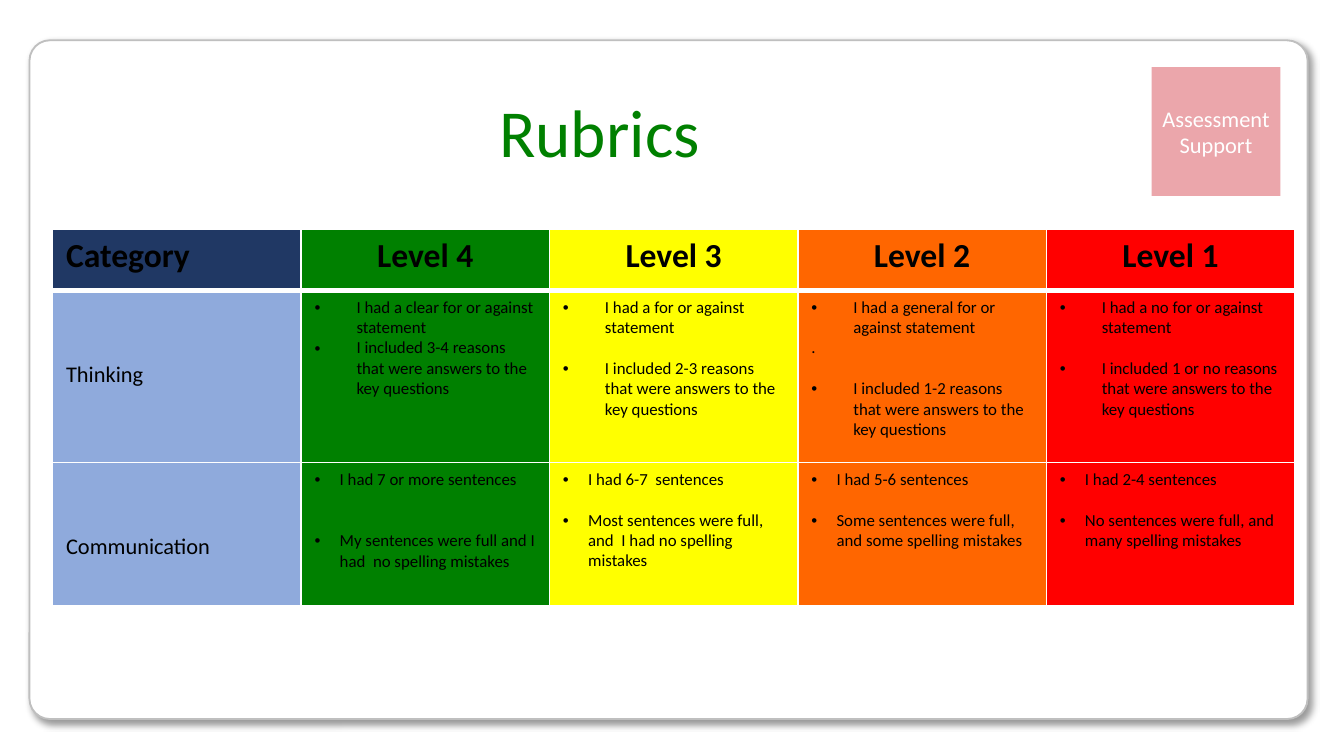
from lxml.etree import SubElement
from pptx import Presentation
from pptx.dml.color import RGBColor
from pptx.enum.shapes import MSO_SHAPE
from pptx.enum.text import MSO_ANCHOR, PP_ALIGN
from pptx.oxml.ns import qn
from pptx.util import Pt

FONT = "Calibri"
COLORS = {
    "white": "FFFFFF", "black": "000000", "card_line": "BFBFBF",
    "badge": "EBA6AB", "title": "008000", "header": "203864",
    "category": "8FAADC", "level4": "008000", "level3": "FFFF00",
    "level2": "FF6600", "level1": "FF0000",
}
LEVELS = ["level4", "level3", "level2", "level1"]
LINE = 11  # height of one 9 pt line

# Each criterion: (text, blank lines before it, has a bullet)
RUBRIC = [
    ("Thinking", 92.2, 22.5, [
        [("I had a clear for or against statement", 0, True),
         ("I included 3-4 reasons that were answers to the key questions", 0, True)],
        [("I had a for or against statement", 0, True),
         ("I included 2-3 reasons that were answers to the key questions", 1, True)],
        [("I had a general for or against statement", 0, True),
         (".", 0, False),
         ("I included 1-2 reasons that were answers to the key questions", 1, True)],
        [("I had a no for or against statement", 0, True),
         ("I included 1 or no reasons that were answers to the key questions", 1, True)],
    ]),
    ("Communication", 77, 13.5, [
        [("I had 7 or more sentences", 0, True),
         ("My sentences were full and I had  no spelling mistakes", 2, True)],
        [("I had 6-7  sentences", 0, True),
         ("Most sentences were full, and  I had no spelling mistakes", 1, True)],
        [("I had 5-6 sentences", 0, True),
         ("Some sentences were full, and some spelling mistakes", 1, True)],
        [("I had 2-4 sentences", 0, True),
         ("No sentences were full, and many spelling mistakes", 1, True)],
    ]),
]


def rgb(name):
    return RGBColor.from_string(COLORS[name])


def write(paragraph, text, size, color="black", bold=False, align=PP_ALIGN.LEFT):
    paragraph.text = text
    paragraph.alignment = align
    for run in paragraph.runs:
        run.font.name = FONT
        run.font.size = Pt(size)
        run.font.bold = bold
        run.font.color.rgb = rgb(color)


def add_bullet(paragraph, indent):
    properties = paragraph._p.get_or_add_pPr()
    properties.set("marL", str(Pt(indent)))
    properties.set("indent", str(-Pt(indent)))
    SubElement(properties, qn("a:buFont"), typeface="Arial")
    SubElement(properties, qn("a:buChar"), char="•")


def style_cell(cell, color, top=1, bottom=1):
    properties = cell._tc.get_or_add_tcPr()
    for side, width in (("L", 1), ("R", 1), ("T", top), ("B", bottom)):
        border = SubElement(properties, qn(f"a:ln{side}"), w=str(Pt(width)))
        fill = SubElement(border, qn("a:solidFill"))
        SubElement(fill, qn("a:srgbClr"), val=COLORS["white"])
    cell.fill.solid()
    cell.fill.fore_color.rgb = rgb(color)
    cell.margin_left = cell.margin_right = Pt(7.2)
    cell.margin_top = cell.margin_bottom = Pt(3.6)


def add_card(slide, left, top, width, height):
    card = slide.shapes.add_shape(MSO_SHAPE.ROUNDED_RECTANGLE,
                                  Pt(left), Pt(top), Pt(width), Pt(height))
    card.adjustments[0] = 0.03
    card.fill.solid()
    card.fill.fore_color.rgb = rgb("white")
    card.line.color.rgb = rgb("card_line")
    card.line.width = Pt(1)
    # Soft shadow towards the lower right
    card.shadow.inherit = False
    effects = card._element.spPr.find(qn("a:effectLst"))
    shadow = SubElement(effects, qn("a:outerShdw"), blurRad=str(Pt(4)),
                        dist=str(Pt(3)), dir="2700000", algn="tl", rotWithShape="0")
    shade = SubElement(shadow, qn("a:srgbClr"), val=COLORS["black"])
    SubElement(shade, qn("a:alpha"), val="40000")


def add_badge(slide, left, top, side):
    badge = slide.shapes.add_shape(MSO_SHAPE.RECTANGLE,
                                   Pt(left), Pt(top), Pt(side), Pt(side))
    badge.shadow.inherit = False
    badge.fill.solid()
    badge.fill.fore_color.rgb = rgb("badge")
    badge.line.fill.background()
    frame = badge.text_frame
    frame.word_wrap = True
    frame.vertical_anchor = MSO_ANCHOR.MIDDLE
    frame.margin_left = frame.margin_right = Pt(5)
    frame.margin_top = frame.margin_bottom = Pt(3)
    write(frame.paragraphs[0], "Assessment Support", 12, "white", align=PP_ALIGN.CENTER)


def add_title(slide, left, top, width, height):
    title = slide.shapes.add_textbox(Pt(left), Pt(top), Pt(width), Pt(height))
    title.text_frame.word_wrap = True
    write(title.text_frame.paragraphs[0], "Rubrics", 36, "title", align=PP_ALIGN.CENTER)


def add_rubric(slide, left, top, width, header_height):
    heights = [header_height] + [height for _, height, _, _ in RUBRIC]
    columns = len(LEVELS) + 1
    rubric = slide.shapes.add_table(len(heights), columns, Pt(left), Pt(top),
                                    Pt(width), Pt(sum(heights))).table
    rubric.horz_banding = False
    for row, height in zip(rubric.rows, heights):
        row.height = Pt(height)
    for column in rubric.columns:
        column.width = Pt(width / columns)

    # Header row
    headings = ["Category"] + [f"Level {level[-1]}" for level in LEVELS]
    for index, (heading, color) in enumerate(zip(headings, ["header"] + LEVELS)):
        cell = rubric.cell(0, index)
        style_cell(cell, color, bottom=3)
        align = PP_ALIGN.CENTER if index else PP_ALIGN.LEFT
        write(cell.text_frame.paragraphs[0], heading, 18, bold=True, align=align)

    # Category rows
    for row, (category, _, indent, criteria) in enumerate(RUBRIC, start=1):
        top_border = 3 if row == 1 else 1
        label = rubric.cell(row, 0)
        style_cell(label, "category", top_border)
        label.margin_top = Pt(37.8)
        write(label.text_frame.paragraphs[0], category, 12)
        for column, (color, items) in enumerate(zip(LEVELS, criteria), start=1):
            cell = rubric.cell(row, column)
            style_cell(cell, color, top_border)
            frame = cell.text_frame
            for position, (text, blank_lines, bulleted) in enumerate(items):
                paragraph = frame.add_paragraph() if position else frame.paragraphs[0]
                if bulleted:
                    add_bullet(paragraph, indent)
                if blank_lines:
                    paragraph.space_before = Pt(blank_lines * LINE)
                write(paragraph, text, 9)


def main():
    deck = Presentation()
    deck.slide_width, deck.slide_height = Pt(720), Pt(405)
    slide = deck.slides.add_slide(deck.slide_layouts[6])
    add_card(slide, 15.8, 21.6, 684.7, 363.6)
    add_badge(slide, 617, 36, 69)
    add_rubric(slide, 28.2, 122.6, 665.5, 33)
    add_title(slide, 28.2, 44.6, 586, 51)
    deck.save("out.pptx")


if __name__ == "__main__":
    main()
